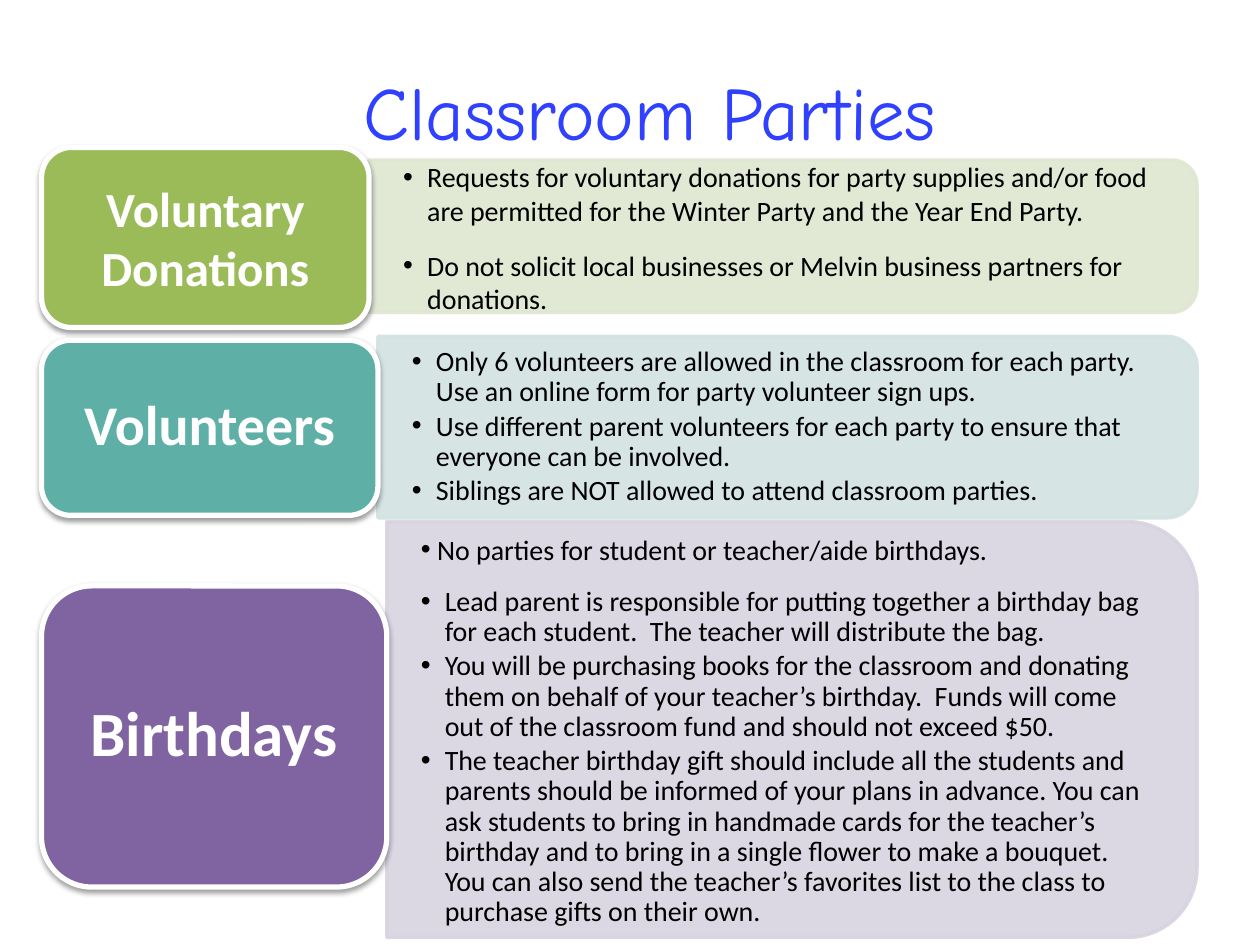
from lxml import etree
from pptx import Presentation
from pptx.dml.color import RGBColor
from pptx.enum.shapes import MSO_SHAPE
from pptx.enum.text import MSO_ANCHOR, PP_ALIGN
from pptx.oxml.ns import qn
from pptx.util import Inches, Pt

ROUND = MSO_SHAPE.ROUNDED_RECTANGLE
ROUND_TOP = MSO_SHAPE.ROUND_2_SAME_RECTANGLE
MIDDLE = MSO_ANCHOR.MIDDLE
CENTER = PP_ALIGN.CENTER

LABEL_LEFT = 0.33
PANEL_RIGHT = 9.5
BODY_SIZE = 16
LOOSE = (0.19, 1.0, 12)  # indent, line spacing, space after
SHORT = (0.13, 1.0, 12)
TIGHT = (0.19, 0.9, 2.4)

# label, its size and line spacing, colour, panel colour, label top and height,
# panel left, top and height, text top and height, text right, bullets
SECTIONS = [
    ("Voluntary Donations", 28, 1.0, "9BBB59", "DEE7D1", (1.17, 1.43),
     (2.93, 1.27, 1.21), (1.34, 1.09), 9.44, [
        (LOOSE, "Requests for voluntary donations for party supplies and/or food "
                "are permitted for the Winter Party and the Year End Party."),
        (LOOSE, "Do not solicit local businesses or Melvin business partners for "
                "donations."),
    ]),
    ("Volunteers", 32, 0.9, "5EAFA6", "D2E3E2", (2.7, 1.39),
     (3.0, 2.67, 1.44), (2.74, 1.3), 9.43, [
        (TIGHT, "Only 6 volunteers are allowed in the classroom for each party. "
                "Use an online form for party volunteer sign ups."),
        (TIGHT, "Use different parent volunteers for each party to ensure that "
                "everyone can be involved."),
        (TIGHT, "Siblings are NOT allowed to attend classroom parties."),
    ]),
    ("Birthdays", 36, 0.9, "8064A2", "D8D3E0", (4.65, 2.39),
     (3.07, 4.14, 3.3), (4.31, 2.97), 9.34, [
        (SHORT, "No parties for student or teacher/aide birthdays."),
        (TIGHT, "Lead parent is responsible for putting together a birthday bag "
                "for each student.  The teacher will distribute the bag."),
        (TIGHT, "You will be purchasing books for the classroom and donating "
                "them on behalf of your teacher’s birthday.  Funds will come "
                "out of the classroom fund and should not exceed $50."),
        (TIGHT, "The teacher birthday gift should include all the students and "
                "parents should be informed of your plans in advance. You can "
                "ask students to bring in handmade cards for the teacher’s "
                "birthday and to bring in a single flower to make a bouquet. "
                "You can also send the teacher’s favorites list to the class to "
                "purchase gifts on their own."),
    ]),
]


def rgb(value):
    return RGBColor.from_string(value)


def add_run(p, text, size, color, font="Calibri", bold=False):
    r = p.add_run()
    r.text = text
    r.font.name = font
    r.font.size = Pt(size)
    r.font.bold = bold
    r.font.color.rgb = rgb(color)


def prepare_frame(sp, inset_x, inset_y):
    tf = sp.text_frame
    tf.word_wrap = True
    tf.vertical_anchor = MIDDLE
    tf.margin_left = tf.margin_right = Inches(inset_x)
    tf.margin_top = tf.margin_bottom = Inches(inset_y)
    return tf


def add_filled(slide, kind, box, fill, line, width):
    sp = slide.shapes.add_shape(kind, *map(Inches, box))
    sp.shadow.inherit = False
    sp.fill.solid()
    sp.fill.fore_color.rgb = rgb(fill)
    sp.line.color.rgb = rgb(line)
    sp.line.width = Pt(width)
    return sp


def add_alpha(color_element, percent):
    etree.SubElement(color_element, qn("a:alpha"), val=str(percent * 1000))


def add_soft_shadow(sp):
    effects = sp._element.spPr.find(qn("a:effectLst"))
    shadow = etree.SubElement(effects, qn("a:outerShdw"), blurRad=str(Pt(3.1)),
                              dist=str(Pt(1.6)), dir="5400000", rotWithShape="0")
    add_alpha(etree.SubElement(shadow, qn("a:srgbClr"), val="000000"), 38)


def add_panel(slide, left, top, height, color):
    """Panel rounded on its right side: a top-rounded shape turned by 90 degrees."""
    width = PANEL_RIGHT - left
    shift = (width - height) / 2
    box = (left + shift, top - shift, height, width)
    sp = add_filled(slide, ROUND_TOP, box, color, color, 2)
    sp.rotation = 90
    for clr in sp._element.spPr.iter(qn("a:srgbClr")):
        add_alpha(clr, 90)


def add_bullets(slide, box, bullets):
    tf = prepare_frame(slide.shapes.add_textbox(*map(Inches, box)), 0.27, 0.14)
    for i, ((indent, spacing, after), text) in enumerate(bullets):
        p = tf.add_paragraph() if i else tf.paragraphs[0]
        p.level = 1
        p.line_spacing = spacing
        p.space_after = Pt(after)
        pPr = p._p.get_or_add_pPr()
        pPr.set("marL", str(Inches(indent)))
        pPr.set("indent", str(-Inches(indent)))
        etree.SubElement(pPr, qn("a:buFont"), typeface="Arial")
        etree.SubElement(pPr, qn("a:buChar"), char="•")
        add_run(p, text, BODY_SIZE, "000000")


def add_label(slide, box, text, size, spacing, color):
    sp = add_filled(slide, ROUND, box, color, "FFFFFF", 3)
    add_soft_shadow(sp)
    p = prepare_frame(sp, 0.12, 0.06).paragraphs[0]
    p.alignment = CENTER
    p.line_spacing = spacing
    add_run(p, text, size, "FFFFFF", bold=True)


def add_title(slide, text):
    sp = slide.shapes.add_textbox(*map(Inches, (0.49, 0.17, 9.33, 1.42)))
    p = prepare_frame(sp, 0.1, 0.05).paragraphs[0]
    p.alignment = CENTER
    add_run(p, text, 42.9, "2F41FF", "Comic Neue")


def main():
    prs = Presentation()
    prs.slide_width, prs.slide_height = Inches(10), Inches(7.5)
    slide = prs.slides.add_slide(prs.slide_layouts[6])
    for (label, size, spacing, color, tint, (label_top, label_height),
         (left, top, height), (text_top, text_height), text_right, bullets) in SECTIONS:
        add_panel(slide, left, top, height, tint)
        add_bullets(slide, (left, text_top, text_right - left, text_height), bullets)
        add_label(slide, (LABEL_LEFT, label_top, left - LABEL_LEFT, label_height),
                  label, size, spacing, color)
    add_title(slide, "Classroom Parties")
    prs.save("out.pptx")


if __name__ == "__main__":
    main()
